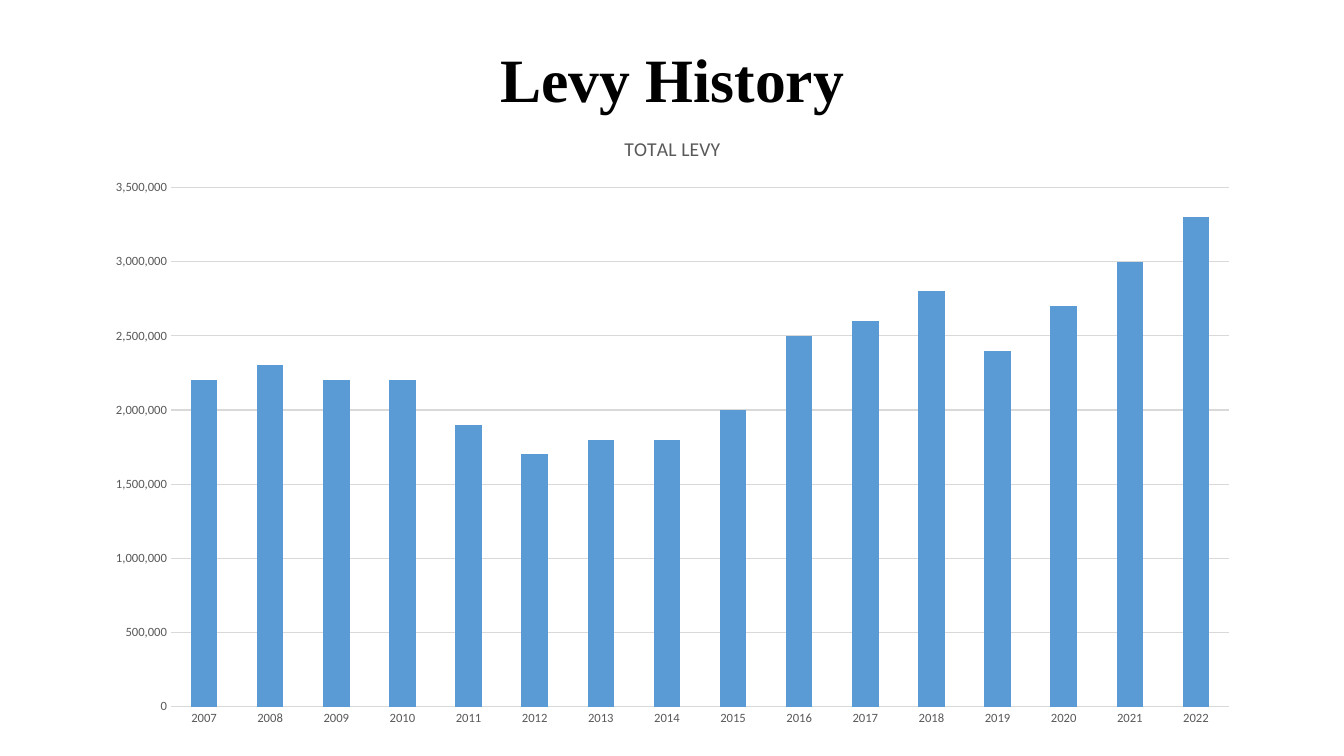
from pptx import Presentation
from pptx.chart.data import CategoryChartData
from pptx.dml.color import RGBColor
from pptx.enum.chart import XL_CHART_TYPE, XL_TICK_MARK
from pptx.enum.text import MSO_ANCHOR, PP_ALIGN
from pptx.util import Inches, Pt

LEVY_MILLIONS = [2.2, 2.3, 2.2, 2.2, 1.9, 1.7, 1.8, 1.8,
                 2.0, 2.5, 2.6, 2.8, 2.4, 2.7, 3.0, 3.3]
FIRST_YEAR = 2007
LEFT, WIDTH = Inches(0.92), Inches(11.5)


def color(hex_value):
    """Turn a hex string into a colour."""
    return RGBColor.from_string(hex_value)


def style_font(font, name, size, hex_value, bold=False):
    """Set the typeface, size, colour and weight of a font."""
    font.name = name
    font.size = Pt(size)
    font.bold = bold
    font.color.rgb = color(hex_value)


def add_heading(slide, text):
    """Add the centred slide heading."""
    heading = slide.shapes.add_textbox(LEFT, Inches(0.37), WIDTH, Inches(0.89))
    frame = heading.text_frame
    frame.word_wrap = True
    frame.vertical_anchor = MSO_ANCHOR.MIDDLE
    frame.text = text
    line = frame.paragraphs[0]
    line.alignment = PP_ALIGN.CENTER
    line.line_spacing = 0.9
    style_font(line.runs[0].font, "Times New Roman", 44, "000000", bold=True)


def style_axis(axis):
    """Hide an axis line and its ticks and style its labels."""
    axis.major_tick_mark = XL_TICK_MARK.NONE
    axis.minor_tick_mark = XL_TICK_MARK.NONE
    axis.format.line.fill.background()
    style_font(axis.tick_labels.font, "Calibri", 9, "595959")


def add_levy_chart(slide, title):
    """Add the column chart of the levy by year."""
    levy_data = CategoryChartData(number_format="#,##0")
    levy_data.categories = [str(FIRST_YEAR + i) for i in range(len(LEVY_MILLIONS))]
    levy_data.add_series(title, [round(value * 1_000_000) for value in LEVY_MILLIONS])
    chart = slide.shapes.add_chart(XL_CHART_TYPE.COLUMN_CLUSTERED, LEFT, Inches(1.13),
                                   WIDTH, Inches(6.19), levy_data).chart
    style_font(chart.font, "Calibri", 10, "000000")
    chart.has_legend = False

    chart.has_title = True
    chart.chart_title.include_in_layout = False
    title_frame = chart.chart_title.text_frame
    title_frame.text = title
    style_font(title_frame.paragraphs[0].runs[0].font, "Calibri", 14, "595959")

    style_axis(chart.category_axis)
    levy_axis = chart.value_axis
    style_axis(levy_axis)
    levy_axis.minimum_scale = 0
    levy_axis.maximum_scale = 3_500_000
    levy_axis.major_unit = 500_000
    levy_axis.tick_labels.number_format = "#,##0"
    levy_axis.tick_labels.number_format_is_linked = False
    levy_axis.has_major_gridlines = True
    gridline = levy_axis.major_gridlines.format.line
    gridline.width = Pt(0.75)
    gridline.color.rgb = color("D9D9D9")

    columns = chart.plots[0]
    columns.gap_width = 150
    columns.vary_by_categories = False
    column_fill = columns.series[0].format.fill
    column_fill.solid()
    column_fill.fore_color.rgb = color("5B9BD5")


def main():
    """Build and save the levy history slide."""
    deck = Presentation()
    deck.slide_width = Inches(13.33)
    deck.slide_height = Inches(7.5)
    slide = deck.slides.add_slide(deck.slide_layouts[6])
    add_levy_chart(slide, "TOTAL LEVY")
    add_heading(slide, "Levy History")
    deck.save("out.pptx")


if __name__ == "__main__":
    main()
